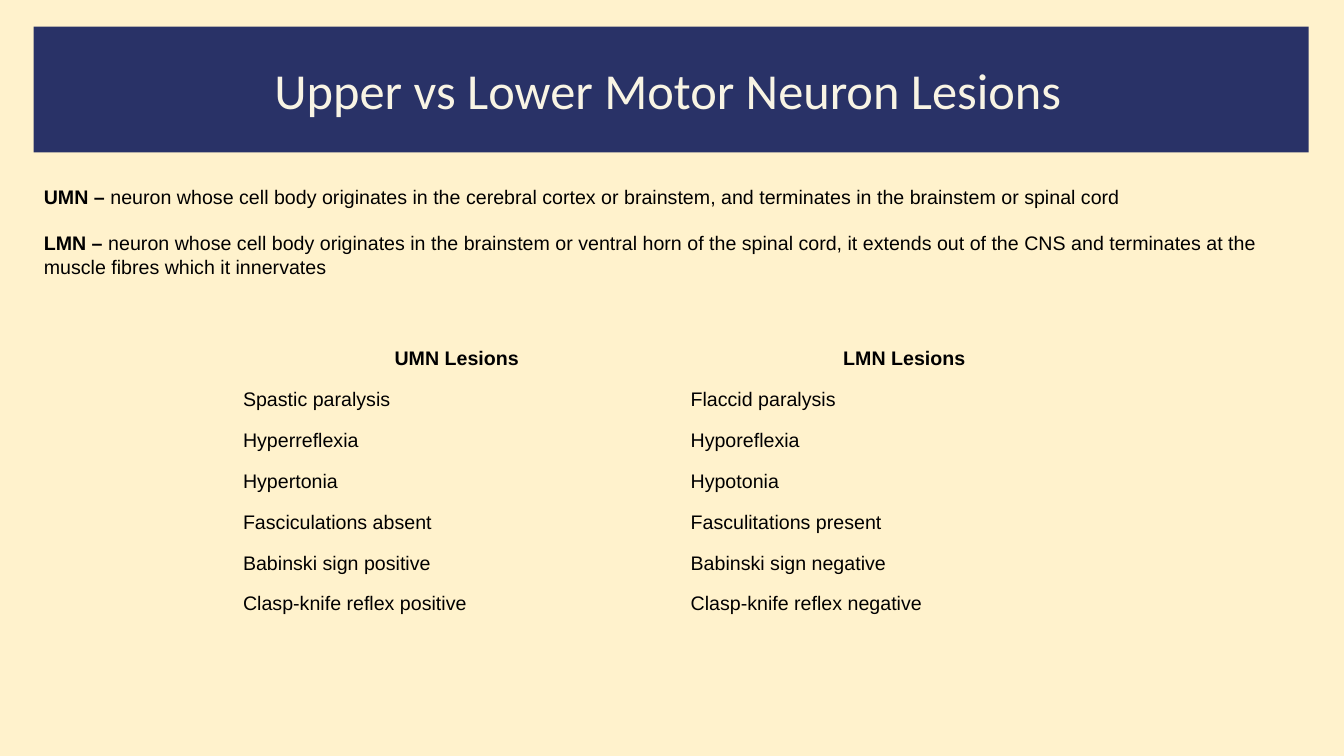
"""Builds a slide comparing upper and lower motor neuron lesions."""
import dataclasses

import pptx
import pptx.dml.color
import pptx.enum.shapes
import pptx.enum.text
import pptx.oxml.ns
import pptx.util
from pptx.util import Cm

ALIGN = pptx.enum.text.PP_ALIGN
NO_STYLE_NO_GRID = "{2D5ABB26-0587-4C30-8999-92F81FD0307C}"


@dataclasses.dataclass(frozen=True)
class Theme:
    """Colours, fonts and type sizes of the slide."""
    background: str = "FFF2CC"
    banner: str = "293267"
    heading: str = "F8F4E4"
    text: str = "000000"
    heading_font: str = "Calibri"
    text_font: str = "Arial"
    heading_size: int = 36
    text_size: int = 14


THEME = Theme()

DEFINITIONS = [
    ("UMN – ", "neuron whose cell body originates in the cerebral cortex or "
               "brainstem, and terminates in the brainstem or spinal cord"),
    ("LMN – ", "neuron whose cell body originates in the brainstem or ventral horn "
               "of the spinal cord, it extends out of the CNS and terminates at the "
               "muscle fibres which it innervates"),
]

LESIONS = [
    ("UMN Lesions", "LMN Lesions"),
    ("Spastic paralysis", "Flaccid paralysis"),
    ("Hyperreflexia", "Hyporeflexia"),
    ("Hypertonia", "Hypotonia"),
    ("Fasciculations absent", "Fasculitations present"),
    ("Babinski sign positive", "Babinski sign negative"),
    ("Clasp-knife reflex positive", "Clasp-knife reflex negative"),
]


def paint(fill, colour):
    """Give a fill one solid colour."""
    fill.solid()
    fill.fore_color.rgb = pptx.dml.color.RGBColor.from_string(colour)


def add_run(paragraph, words, bold=False, font=THEME.text_font,
            size=THEME.text_size, colour=THEME.text):
    """Append a formatted run to a paragraph."""
    run = paragraph.add_run()
    run.text = words
    run.font.name = font
    run.font.size = pptx.util.Pt(size)
    run.font.bold = bold
    run.font.color.rgb = pptx.dml.color.RGBColor.from_string(colour)


def place(placeholder, left, top, width, height):
    """Move a placeholder and return its wrapped text frame."""
    placeholder.left, placeholder.top = left, top
    placeholder.width, placeholder.height = width, height
    frame = placeholder.text_frame
    frame.word_wrap = True
    frame.auto_size = pptx.enum.text.MSO_AUTO_SIZE.NONE
    return frame


def add_banner(slide):
    """Draw the band behind the title."""
    banner = slide.shapes.add_shape(
        pptx.enum.shapes.MSO_SHAPE.RECTANGLE, Cm(0.85), Cm(0.67), Cm(32.13), Cm(3.17))
    banner.shadow.inherit = False
    paint(banner.fill, THEME.banner)
    banner.line.fill.background()
    slide.shapes._spTree.insert(2, banner._element)


def write_title(slide, words):
    """Fill the title placeholder."""
    frame = place(slide.shapes.title, Cm(6.66), Cm(1.36), Cm(20.95), Cm(1.8))
    heading = frame.paragraphs[0]
    heading.alignment = ALIGN.LEFT
    add_run(heading, words, font=THEME.heading_font,
            size=THEME.heading_size, colour=THEME.heading)


def write_definitions(slide):
    """Fill the body placeholder with a term and meaning per paragraph."""
    frame = place(slide.placeholders[1], Cm(0.85), Cm(4.52), Cm(32.13), Cm(2.64))
    for index, (term, meaning) in enumerate(DEFINITIONS):
        definition = frame.add_paragraph() if index else frame.paragraphs[0]
        properties = definition._p.get_or_add_pPr()
        properties.set("marL", "0")
        properties.set("indent", "0")
        definition.space_before = pptx.util.Pt(16.5 if index else 0)
        properties.append(pptx.oxml.parse_xml(
            f'<a:buNone {pptx.oxml.ns.nsdecls("a")}/>'))
        add_run(definition, term, bold=True)
        add_run(definition, meaning)


def add_lesion_table(slide):
    """Add the plain two-column comparison table."""
    row_height = Cm(1.03)
    lesions = slide.shapes.add_table(
        len(LESIONS), 2, Cm(5.87), Cm(8.64), Cm(22.56), row_height * len(LESIONS)).table
    lesions.horz_banding = False
    style = lesions._tbl.tblPr.find(pptx.oxml.ns.qn("a:tableStyleId"))
    style.text = NO_STYLE_NO_GRID
    for row_index, signs in enumerate(LESIONS):
        is_header = row_index == 0
        for column_index, sign in enumerate(signs):
            cell = lesions.cell(row_index, column_index)
            cell.fill.background()
            entry = cell.text_frame.paragraphs[0]
            entry.alignment = ALIGN.CENTER if is_header else ALIGN.LEFT
            add_run(entry, sign, bold=is_header)


def main():
    """Build and save the slide."""
    deck = pptx.Presentation()
    deck.slide_width, deck.slide_height = Cm(33.87), Cm(19.05)
    slide = deck.slides.add_slide(deck.slide_layouts[1])
    paint(slide.background.fill, THEME.background)
    add_banner(slide)
    write_title(slide, "Upper vs Lower Motor Neuron Lesions")
    add_lesion_table(slide)
    write_definitions(slide)
    deck.save("out.pptx")


if __name__ == "__main__":
    main()
